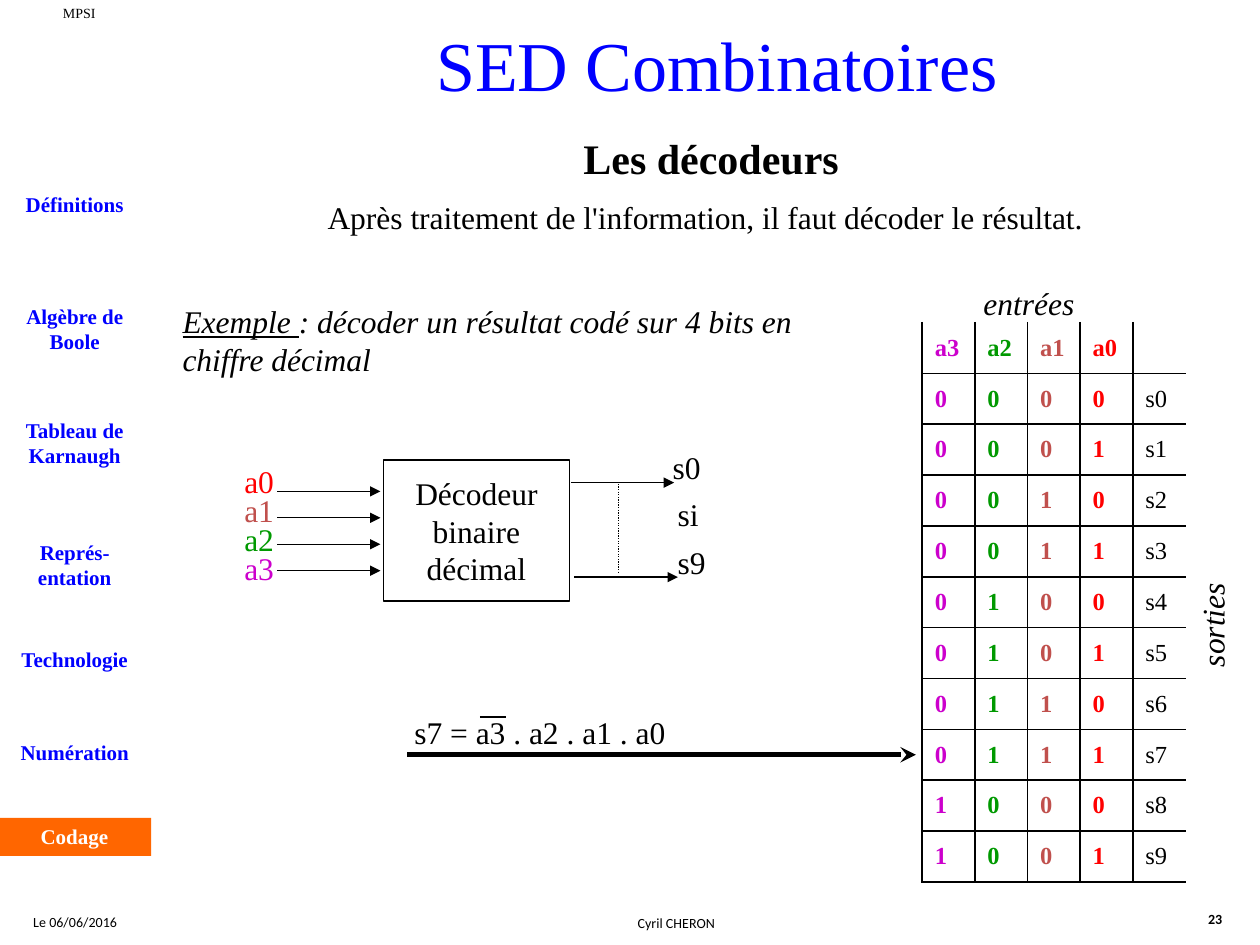
from pptx import Presentation
from pptx.dml.color import RGBColor
from pptx.enum.dml import MSO_LINE
from pptx.enum.shapes import MSO_CONNECTOR, MSO_SHAPE
from pptx.enum.text import MSO_ANCHOR, MSO_AUTO_SIZE, PP_ALIGN
from pptx.oxml.ns import qn
from pptx.util import Pt
from lxml import etree

LEFT, CENTER = PP_ALIGN.LEFT, PP_ALIGN.CENTER
TOP, MIDDLE = MSO_ANCHOR.TOP, MSO_ANCHOR.MIDDLE
FIXED_SIZE = MSO_AUTO_SIZE.NONE
STRAIGHT, RECTANGLE = MSO_CONNECTOR.STRAIGHT, MSO_SHAPE.RECTANGLE
DOTTED = MSO_LINE.ROUND_DOT
TITLE_ONLY = 5

BLACK = RGBColor(0x00, 0x00, 0x00)
WHITE = RGBColor(0xFF, 0xFF, 0xFF)
BLUE = RGBColor(0x00, 0x00, 0xFF)
ORANGE = RGBColor(0xFF, 0x66, 0x00)
RED = RGBColor(0xFF, 0x00, 0x00)
BRICK = RGBColor(0xC0, 0x50, 0x4D)
GREEN = RGBColor(0x00, 0x99, 0x00)
MAGENTA = RGBColor(0xCC, 0x00, 0xCC)

INPUT_COLORS = {"a0": RED, "a1": BRICK, "a2": GREEN, "a3": MAGENTA}
SECTION_TOPS = {
    "Définitions": 106,
    "Algèbre de Boole": 170,
    "Tableau de Karnaugh": 235,
    "Représ-entation": 304.5,
    "Technologie": 366,
    "Numération": 419,
}


class SlideBuilder:
    def __init__(self, slide, font="Times New Roman", size=18):
        self.slide = slide
        self.font = font
        self.size = size

    def style(self, paragraph, size=None, color=BLACK, bold=False,
              italic=False, align=LEFT, font=None):
        paragraph.alignment = align
        paragraph.font.name = font or self.font
        paragraph.font.size = Pt(size or self.size)
        paragraph.font.color.rgb = color
        paragraph.font.bold = bold
        paragraph.font.italic = italic

    def set_text(self, shape, content, anchor=TOP, inset_x=7.2, inset_y=3.6, **style):
        frame = shape.text_frame
        frame.word_wrap = True
        frame.auto_size = FIXED_SIZE
        frame.vertical_anchor = anchor
        frame.margin_left = frame.margin_right = Pt(inset_x)
        frame.margin_top = frame.margin_bottom = Pt(inset_y)
        frame.text = content
        for paragraph in frame.paragraphs:
            self.style(paragraph, **style)
        return frame

    def title(self, content, left, top, width, height, **style):
        heading = self.slide.shapes.title
        heading.left, heading.top = Pt(left), Pt(top)
        heading.width, heading.height = Pt(width), Pt(height)
        self.set_text(heading, content, **style)

    def text(self, content, left, top, width, height=28.8, rotation=0, **style):
        box = self.slide.shapes.add_textbox(Pt(left), Pt(top), Pt(width), Pt(height))
        box.rotation = rotation
        return self.set_text(box, content, **style)

    def box(self, content, left, top, width, height, fill=None, outline=None, **style):
        rectangle = self.slide.shapes.add_shape(
            RECTANGLE, Pt(left), Pt(top), Pt(width), Pt(height))
        rectangle.shadow.inherit = False
        if fill is None:
            rectangle.fill.background()
        else:
            rectangle.fill.solid()
            rectangle.fill.fore_color.rgb = fill
        if outline is None:
            rectangle.line.fill.background()
        else:
            rectangle.line.color.rgb = outline
            rectangle.line.width = Pt(0.75)
        self.set_text(rectangle, content, align=CENTER, **style)

    def line(self, x1, y1, x2, y2, width=0.75, arrow=None, dash=None):
        connector = self.slide.shapes.add_connector(
            STRAIGHT, Pt(x1), Pt(y1), Pt(x2), Pt(y2))
        connector.line.color.rgb = BLACK
        connector.line.width = Pt(width)
        if dash is not None:
            connector.line.dash_style = dash
        properties = connector._element.spPr
        if arrow:
            etree.SubElement(properties.find(qn("a:ln")), qn("a:tailEnd"), type=arrow)
        etree.SubElement(properties, qn("a:effectLst"))

    def border(self, cell, sides):
        properties = cell._tc.get_or_add_tcPr()
        for side in sides:
            edge = etree.SubElement(properties, qn(f"a:ln{side}"), w=str(Pt(1)))
            fill = etree.SubElement(edge, qn("a:solidFill"))
            etree.SubElement(fill, qn("a:srgbClr"), val=str(BLACK))

    def table(self, rows, column_colors, left, top, column_width, row_height):
        """Grid open at the top and on the right; the last column is plain."""
        last = len(column_colors) - 1
        table = self.slide.shapes.add_table(
            len(rows), last + 1, Pt(left), Pt(top),
            Pt(column_width * (last + 1)), Pt(row_height * len(rows))).table
        table.first_row = table.horz_banding = False
        for column in table.columns:
            column.width = Pt(column_width)
        for r, values in enumerate(rows):
            table.rows[r].height = Pt(row_height)
            for c, (value, color) in enumerate(zip(values, column_colors)):
                cell = table.cell(r, c)
                cell.text = value
                cell.vertical_anchor = MIDDLE
                self.style(cell.text_frame.paragraphs[0], size=14,
                           color=color, bold=c < last)
                sides = "L" + ("R" if c < last else "") + ("T" if r else "") + "B"
                self.border(cell, sides)
                cell.fill.background()


def add_frame(page):
    """Header, section menu and footer."""
    page.text("MPSI", 23, 2.9, 44.6, 9.4, inset_x=0, inset_y=0, size=8, align=CENTER)
    for section, top in SECTION_TOPS.items():
        page.text(section, 1, top, 83.5, 36, inset_x=2.9, size=12,
                  color=BLUE, bold=True, align=CENTER)
    page.box("Codage", -1.4, 467.3, 87.8, 21.8, fill=ORANGE,
             size=12, color=WHITE, bold=True)
    footer = {"size": 8, "font": "Calibri", "align": CENTER}
    page.text("Le 06/06/2016", 8, 518.4, 70, 17, **footer)
    page.text("Cyril CHERON", 90, 519, 593, 17, **footer)
    page.text("23", 680.4, 517, 28, 17, bold=True, **footer)


def add_decoder(page):
    page.box("Décodeur\nbinaire\ndécimal", 219, 262.8, 106.5, 80.6,
             outline=BLACK, anchor=MIDDLE)
    for i, (name, color) in enumerate(INPUT_COLORS.items()):
        page.text(name, 132.5, 260.6 + 16.6 * i, 32, color=color)
        y = 280.8 + 15.1 * i
        page.line(158.4, y, 217.4, y, arrow="triangle")
    page.line(326.2, 275.8, 385.2, 275.8, arrow="triangle")
    page.line(328.3, 329.8, 387.4, 329.8, arrow="triangle")
    page.line(353.5, 276.5, 353.5, 327.6, dash=DOTTED)
    for name, left, top in (("s0", 377.3, 252.7), ("si", 380.2, 279.4), ("s9", 380.2, 306.7)):
        page.text(name, left, top, 56)


def add_truth_table(page):
    names = list(reversed(INPUT_COLORS))
    rows = [names + [""]]
    rows += [list(f"{n:04b}") + [f"s{n}"] for n in range(10)]
    colors = [INPUT_COLORS[name] for name in names] + [BLACK]
    page.table(rows, colors, 527, 184.3, 30.1, 29.07)
    page.text("entrées", 524, 159, 128, italic=True, align=CENTER)
    page.text("sorties", 547.2, 342.7, 291, rotation=270, italic=True, align=CENTER)


def main():
    presentation = Presentation()
    presentation.slide_width, presentation.slide_height = Pt(720), Pt(540)
    layout = presentation.slide_layouts[TITLE_ONLY]
    page = SlideBuilder(presentation.slides.add_slide(layout))

    add_frame(page)
    page.title("SED Combinatoires", 175, 8.6, 469.4, 55.4,
               size=40, color=BLUE, align=CENTER)
    page.text("Les décodeurs", 100, 72, 612.7, 36, size=24, bold=True, align=CENTER)
    page.text("Après traitement de l'information, il faut décoder le résultat.",
              97.2, 109.4, 612, align=CENTER)

    example = page.text("", 97.2, 169.2, 378, 72, italic=True).paragraphs[0]
    label = example.add_run()
    label.text = "Exemple "
    label.font.underline = True
    example.add_run().text = ": décoder un résultat codé sur 4 bits en chiffre décimal"

    add_decoder(page)
    add_truth_table(page)

    page.text("s7 = a3 . a2 . a1 . a0", 229.7, 404, 175)
    page.line(274.3, 409.7, 289.4, 409.7)
    page.line(232.6, 431.3, 523.4, 431.3, width=3, arrow="stealth")
    presentation.save("out.pptx")


if __name__ == "__main__":
    main()
